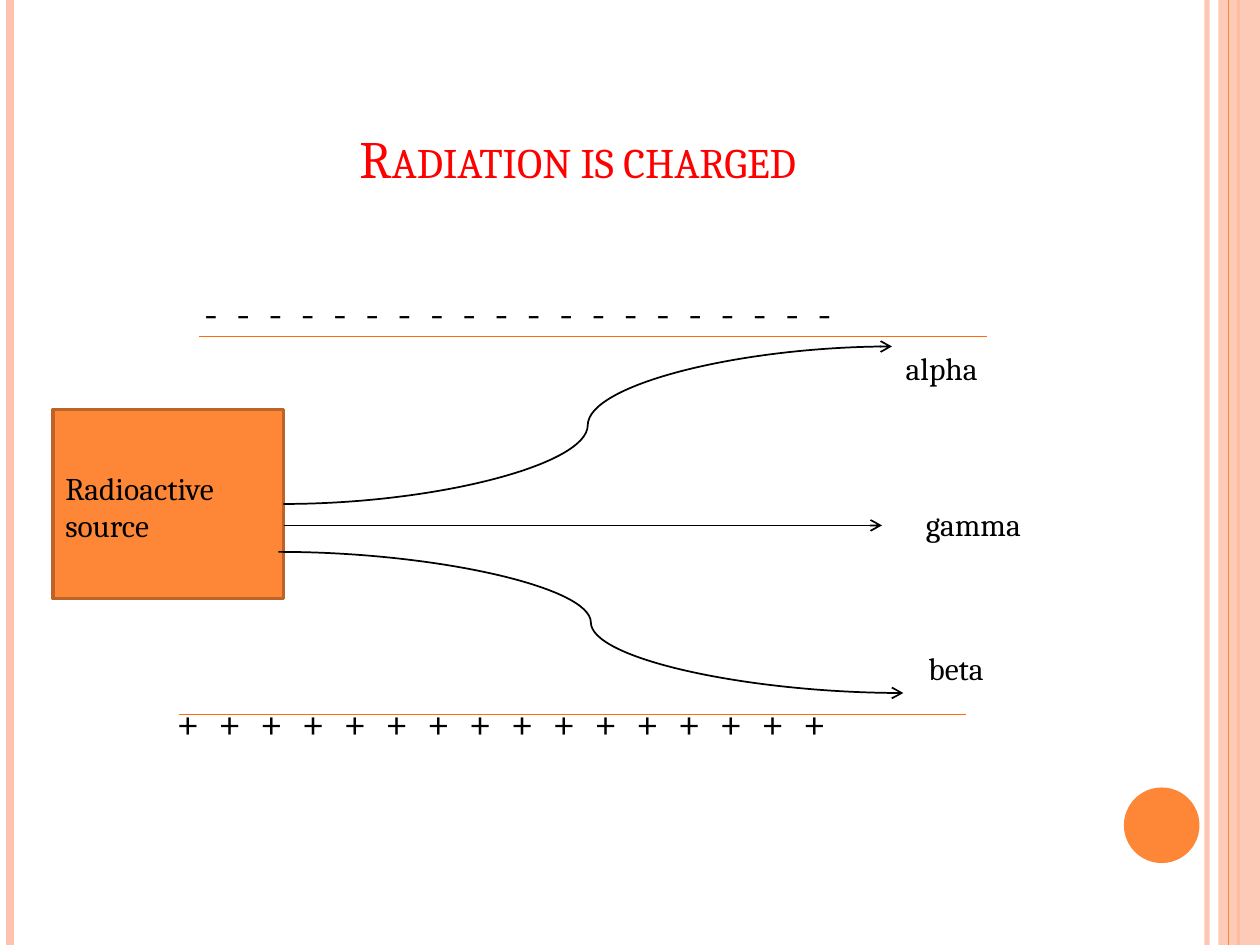
from lxml import etree
from pptx import Presentation
from pptx.dml.color import RGBColor
from pptx.enum.shapes import MSO_CONNECTOR, MSO_SHAPE
from pptx.enum.text import MSO_ANCHOR, MSO_AUTO_SIZE, PP_ALIGN
from pptx.oxml.ns import qn
from pptx.util import Inches, Pt

STRAIGHT, CURVE = MSO_CONNECTOR.STRAIGHT, MSO_CONNECTOR.CURVE
RECTANGLE, OVAL = MSO_SHAPE.RECTANGLE, MSO_SHAPE.OVAL
BOTTOM, TOP = MSO_ANCHOR.BOTTOM, MSO_ANCHOR.TOP
NO_AUTOFIT = MSO_AUTO_SIZE.NONE
CENTER, LEFT = PP_ALIGN.CENTER, PP_ALIGN.LEFT

FONT = "Cambria"
BLACK, RED = "000000", "FF0000"
ORANGE, PEACH = "FE8637", "FEC3AE"
PLATE_ORANGE, SOURCE_EDGE = "FF6B0A", "BC6329"


def rgb(value):
    return RGBColor.from_string(value)


def set_opacity(fill, percent):
    color = fill._xPr.find(qn("a:solidFill"))[0]
    etree.SubElement(color, qn("a:alpha"), val=str(percent * 1000))


def style_font(paragraph, size, color=BLACK):
    font = paragraph.font
    font.name, font.size = FONT, Pt(size)
    font.color.rgb = rgb(color)


def place(shape, left, top, width, height):
    shape.left, shape.top = Inches(left), Inches(top)
    shape.width, shape.height = Inches(width), Inches(height)


def add_line(slide, start, end, color, width, kind=STRAIGHT, arrow=False):
    line = slide.shapes.add_connector(kind, *map(Inches, (*start, *end)))
    line.line.color.rgb = rgb(color)
    line.line.width = Pt(width)
    if arrow:
        etree.SubElement(line.line._get_or_add_ln(), qn("a:tailEnd"), type="arrow")
    etree.SubElement(line._element.spPr, qn("a:effectLst"))
    return line


def add_block(slide, kind, left, top, width, height, fill):
    """Add a filled preset shape without outline or shadow."""
    block = slide.shapes.add_shape(kind, *map(Inches, (left, top, width, height)))
    block.shadow.inherit = False
    block.fill.solid()
    block.fill.fore_color.rgb = rgb(fill)
    block.line.fill.background()
    return block


def add_label(slide, text, left, top, width, height):
    label = slide.shapes.add_textbox(*map(Inches, (left, top, width, height)))
    label.text_frame.word_wrap = True
    label.text_frame.text = text
    style_font(label.text_frame.paragraphs[0], 18)


def add_side_bands(slide, width, height):
    """Decorate the left and right edges of the slide."""
    def stripe(x, color, weight):
        return add_line(slide, (x, 0), (x, height), color, weight)

    inner = stripe(width - 0.42, PEACH, 3)
    set_opacity(inner.line.fill, 93)
    stripe(0.08, PEACH, 4.5)
    stripe(width - 0.17, ORANGE, 1.5)
    band = add_block(slide, RECTANGLE, width - 0.33, 0, 0.33, height, PEACH)
    set_opacity(band.fill, 87)
    stripe(width - 0.25, ORANGE, 0.75)
    add_block(slide, OVAL, width - 1.08, height - 1.25, 0.6, 0.6, ORANGE)


def fill_title(title, left, top, width, height):
    place(title, left, top, width, height)
    frame = title.text_frame
    frame.text = "Radiation is charged"
    frame.vertical_anchor = BOTTOM
    frame.auto_size = NO_AUTOFIT
    heading = frame.paragraphs[0]
    heading.alignment = CENTER
    style_font(heading, 30, RED)
    heading.font._element.set("cap", "small")


def fill_charges(body, left, top, width, height):
    """Write the rows of charges that lie along the two plates."""
    place(body, left, top, width, height)
    frame = body.text_frame
    frame.auto_size = NO_AUTOFIT
    frame.vertical_anchor = TOP
    rows = (("-", 20, 1.02, 0), ("+", 16, 0.8, 206))
    frame.text = "\n".join("  ".join(sign * count) for sign, count, _, _ in rows)
    for row, (_, _, margin, gap) in zip(frame.paragraphs, rows):
        row.alignment = LEFT
        row.space_before = Pt(gap)
        style_font(row, 24)
        properties = row._p.get_or_add_pPr()
        properties.set("marL", str(Inches(margin)))
        properties.set("indent", "0")
        no_bullet = etree.Element(qn("a:buNone"))
        properties.find(qn("a:defRPr")).addprevious(no_bullet)


def add_plates(slide, left, top, width, gap):
    for x, y in ((left, top + gap), (left + 0.16, top)):
        add_line(slide, (x, y), (x + width, y), PLATE_ORANGE, 1)


def add_source(slide, left, top, width, height):
    source = add_block(slide, RECTANGLE, left, top, width, height, ORANGE)
    source.line.color.rgb = rgb(SOURCE_EDGE)
    source.line.width = Pt(2)
    add_label(slide, "Radioactive source", left, top + 0.42, width, 0.71)


def add_rays(slide, left, top):
    """Draw the three rays and their names from the edge of the source."""
    rays = (
        ("alpha", CURVE, (0, 0.75), (4.83, -0.5), (4.84, -0.53)),
        ("beta", CURVE, (-0.04, 1.13), (4.92, 2.25), (5.02, 1.85)),
        ("gamma", STRAIGHT, (0, 0.92), (4.75, 0.92), (5, 0.71)),
    )
    for name, kind, *points in rays:
        start, end, corner = [(left + x, top + y) for x, y in points]
        add_line(slide, start, end, BLACK, 1, kind, arrow=True)
        add_label(slide, name, *corner, 1.17, 0.4)


def main():
    deck = Presentation()
    deck.slide_width, deck.slide_height = Inches(10), Inches(7.5)
    slide = deck.slides.add_slide(deck.slide_layouts[1])
    add_side_bands(slide, 10, 7.5)
    fill_title(slide.shapes.title, 0.5, 0.3, 8.17, 1.25)
    fill_charges(slide.placeholders[1], 0.5, 2.22, 8.17, 4.86)
    add_plates(slide, 1.42, 2.67, 6.25, 3)
    add_source(slide, 0.42, 3.25, 1.83, 1.5)
    add_rays(slide, 2.25, 3.25)
    deck.save("out.pptx")


if __name__ == "__main__":
    main()
